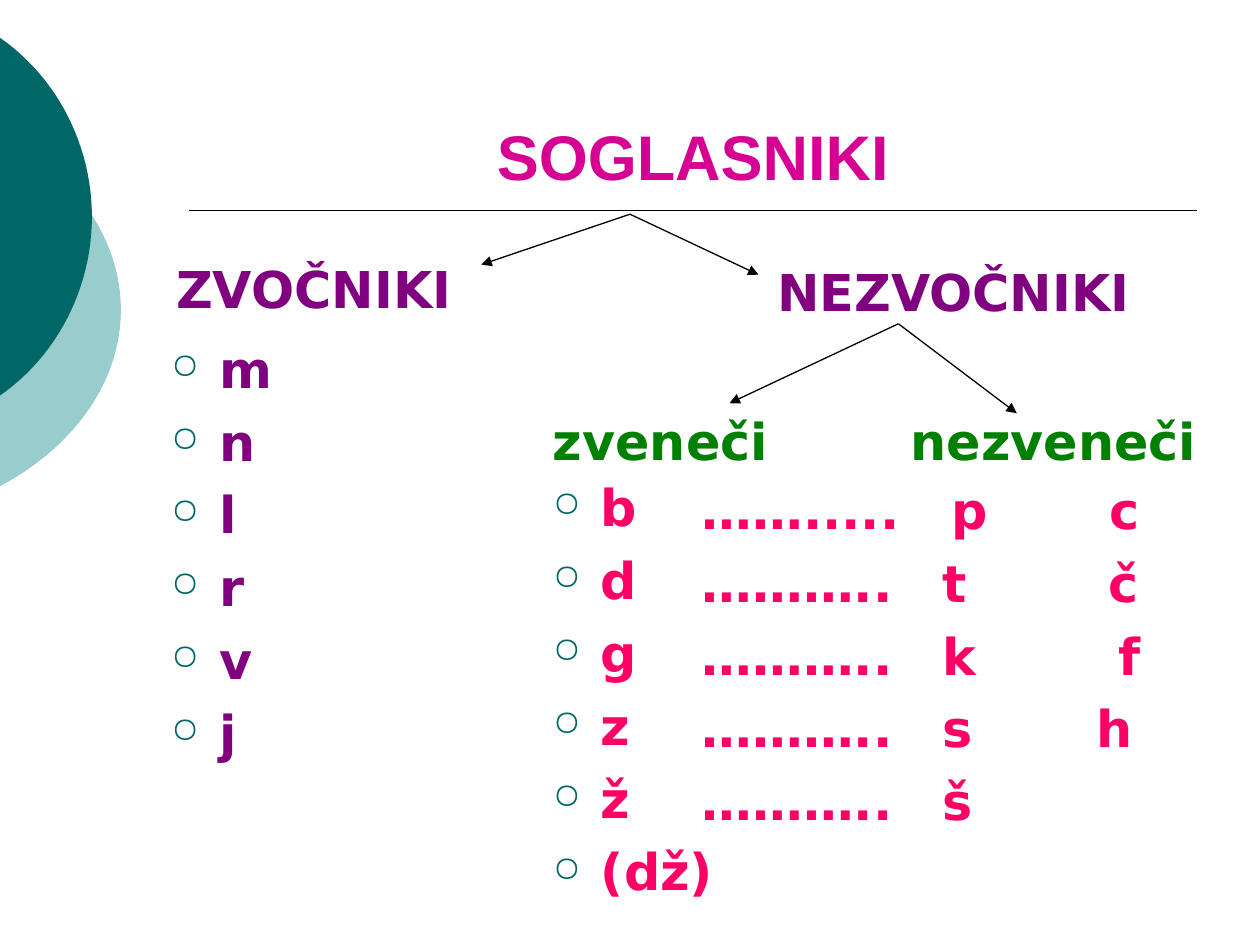
from lxml.etree import SubElement
from pptx import Presentation
from pptx.dml.color import RGBColor
from pptx.enum.shapes import MSO_CONNECTOR
from pptx.enum.text import MSO_ANCHOR, MSO_AUTO_SIZE, PP_ALIGN
from pptx.oxml.ns import qn
from pptx.util import Inches, Pt

COLORS = {"deep": "006666", "pale": "99CCCC", "title": "D60093", "group": "800080",
          "subgroup": "008000", "letter": "FF0066", "line": "000000"}
BODY_FONT = "DejaVu Sans"
INDENT = 0.38
INSET = 0.1

# Dots and letters of each row, with the left edges of the letters on the slide
VOICELESS_ROWS = [
    (["…….....", "p", "c"], [7.55, 8.81]),
    (["………..", "t", "č"], [7.48, 8.8]),
    (["………..", "k", "f"], [7.48, 8.88]),
    (["………..", "s", "h"], [7.48, 8.7]),
    (["………..", "š"], [7.48]),
]


def rgb(name):
    return RGBColor.from_string(COLORS[name])


def set_font(font, name, size, color):
    font.name, font.size, font.bold = name, Pt(size), True
    font.color.rgb = rgb(color)


def add_bullet(paragraph):
    properties = paragraph._p.get_or_add_pPr()
    properties.set("marL", str(Inches(INDENT)))
    properties.set("indent", str(-Inches(INDENT)))
    bullet_color = SubElement(properties, qn("a:buClr"))
    SubElement(bullet_color, qn("a:srgbClr"), val=COLORS["deep"])
    SubElement(properties, qn("a:buSzPct"), val="70000")
    SubElement(properties, qn("a:buChar"), char="○")


def add_tabs(paragraph, stops):
    tabs = SubElement(paragraph._p.get_or_add_pPr(), qn("a:tabLst"))
    for stop in stops:
        SubElement(tabs, qn("a:tab"), pos=str(Inches(stop)), algn="l")


def add_text(slide, place, lines, color, bulleted=False, tab_stops=None):
    box = slide.shapes.add_textbox(*map(Inches, place))
    frame = box.text_frame
    frame.word_wrap = True
    for row, line in enumerate(lines):
        paragraph = frame.paragraphs[0] if row == 0 else frame.add_paragraph()
        paragraph.text = line
        if bulleted:
            add_bullet(paragraph)
        if tab_stops:
            add_tabs(paragraph, tab_stops[row])
        paragraph.space_before = Pt(6.8 if row else 0)
        set_font(paragraph.font, BODY_FONT, 29, color)


def add_line(slide, start, end, width, arrow=False):
    line = slide.shapes.add_connector(MSO_CONNECTOR.STRAIGHT, *map(Inches, start + end))
    line.line.color.rgb = rgb("line")
    line.line.width = Pt(width)
    if arrow:
        SubElement(line.line._get_or_add_ln(), qn("a:tailEnd"), type="triangle")
    SubElement(line._element.spPr, qn("a:effectLst"))


def add_edge_disc(slide, top, middle, reach, controls, color, steps=24):
    """Disc cut by the left edge: a Bezier arc mirrored about its middle."""
    (x1, y1), (x2, y2) = controls
    upper = []
    for step in range(steps + 1):
        t = step / steps
        u = 1 - t
        x = 3 * u * u * t * x1 + 3 * u * t * t * x2 + t ** 3 * reach
        y = u ** 3 * top + 3 * u * u * t * y1 + 3 * u * t * t * y2 + t ** 3 * middle
        upper.append((x, y))
    lower = [(x, 2 * middle - y) for x, y in reversed(upper[:-1])]
    outline = slide.shapes.build_freeform(0, Inches(top))
    outline.add_line_segments([(Inches(x), Inches(y)) for x, y in upper[1:] + lower])
    disc = outline.convert_to_shape()
    disc.shadow.inherit = False
    disc.fill.solid()
    disc.fill.fore_color.rgb = rgb(color)
    disc.line.fill.background()


def add_title(slide, text):
    title = slide.shapes.title
    title.left, title.top, title.width, title.height = map(Inches, (1.5, 0.33, 8, 1.25))
    frame = title.text_frame
    frame.text = text
    frame.vertical_anchor = MSO_ANCHOR.BOTTOM
    frame.auto_size = MSO_AUTO_SIZE.NONE
    frame.paragraphs[0].alignment = PP_ALIGN.CENTER
    set_font(frame.paragraphs[0].font, "Arial", 36, "title")


def main():
    presentation = Presentation()
    presentation.slide_width, presentation.slide_height = Inches(10), Inches(7.5)
    slide = presentation.slides.add_slide(presentation.slide_layouts[5])

    # Discs at the left edge, title and rule
    add_edge_disc(slide, 1.06, 2.46, 0.96, [(0.6, 1.38), (0.96, 1.9)], "pale")
    add_edge_disc(slide, 0.3, 1.72, 0.73, [(0.46, 0.62), (0.73, 1.16)], "deep")
    add_line(slide, (1.5, 1.67), (9.5, 1.67), 1)
    add_title(slide, "SOGLASNIKI")

    # Headings of groups and subgroups
    for place, heading, color in [
        ((1.3, 2, 2.79, 0.65), "ZVOČNIKI", "group"),
        ((6.07, 2.02, 3.27, 0.65), "NEZVOČNIKI", "group"),
        ((4.29, 3.2, 2.28, 0.65), "zveneči", "subgroup"),
        ((7.13, 3.2, 2.6, 0.65), "nezveneči", "subgroup"),
    ]:
        add_text(slide, place, [heading], color)

    # Letters of each group
    add_text(slide, (1.26, 2.63, 1.45, 3.56), "mnlrvj", "group", bulleted=True)
    add_text(slide, (4.29, 3.73, 2.28, 3.4), [*"bdgzž", "(dž)"], "letter", bulleted=True)
    voiceless_left = 5.47
    add_text(slide, (voiceless_left, 3.75, 3.78, 3.4),
             ["\t".join(parts) for parts, _ in VOICELESS_ROWS], "letter",
             tab_stops=[[edge - voiceless_left - INSET for edge in edges]
                        for _, edges in VOICELESS_ROWS])

    # Branches from each heading to its two parts
    for origin, targets in [((5, 1.7), [(3.82, 2.1), (6.02, 2.18)]),
                            ((7.13, 2.57), [(5.79, 3.2), (8.07, 3.28)])]:
        for target in targets:
            add_line(slide, origin, target, 0.75, arrow=True)

    presentation.save("out.pptx")


if __name__ == "__main__":
    main()
